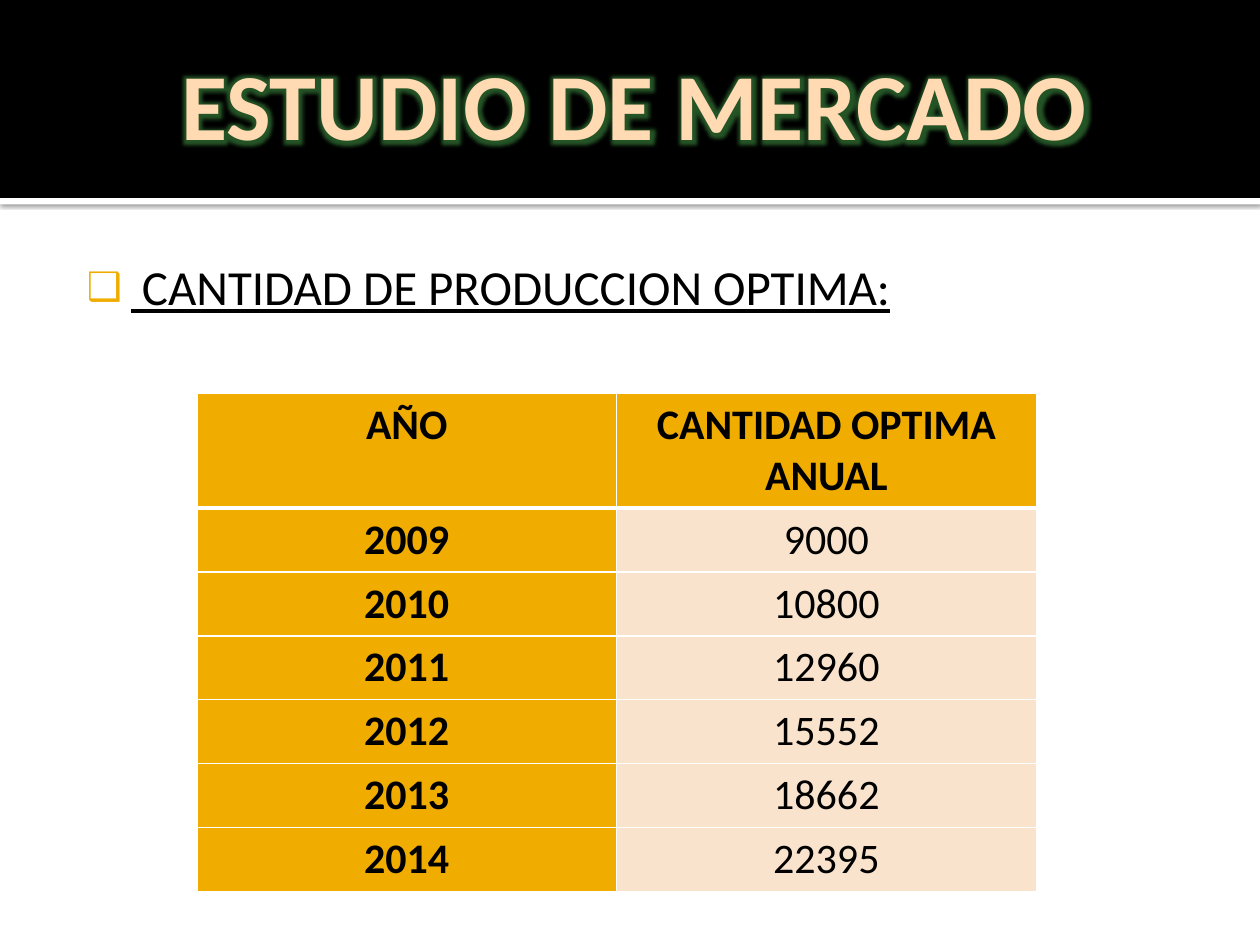
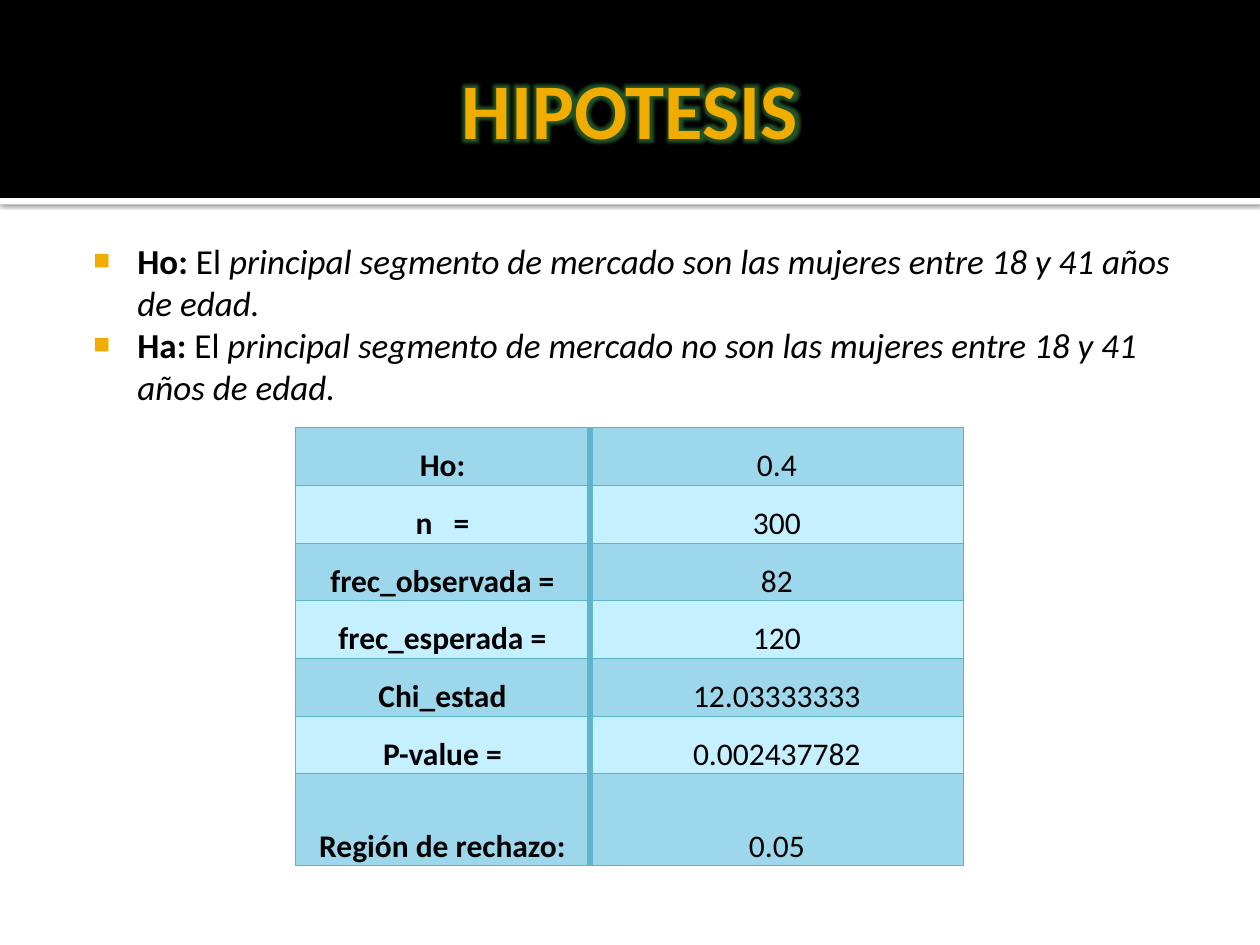
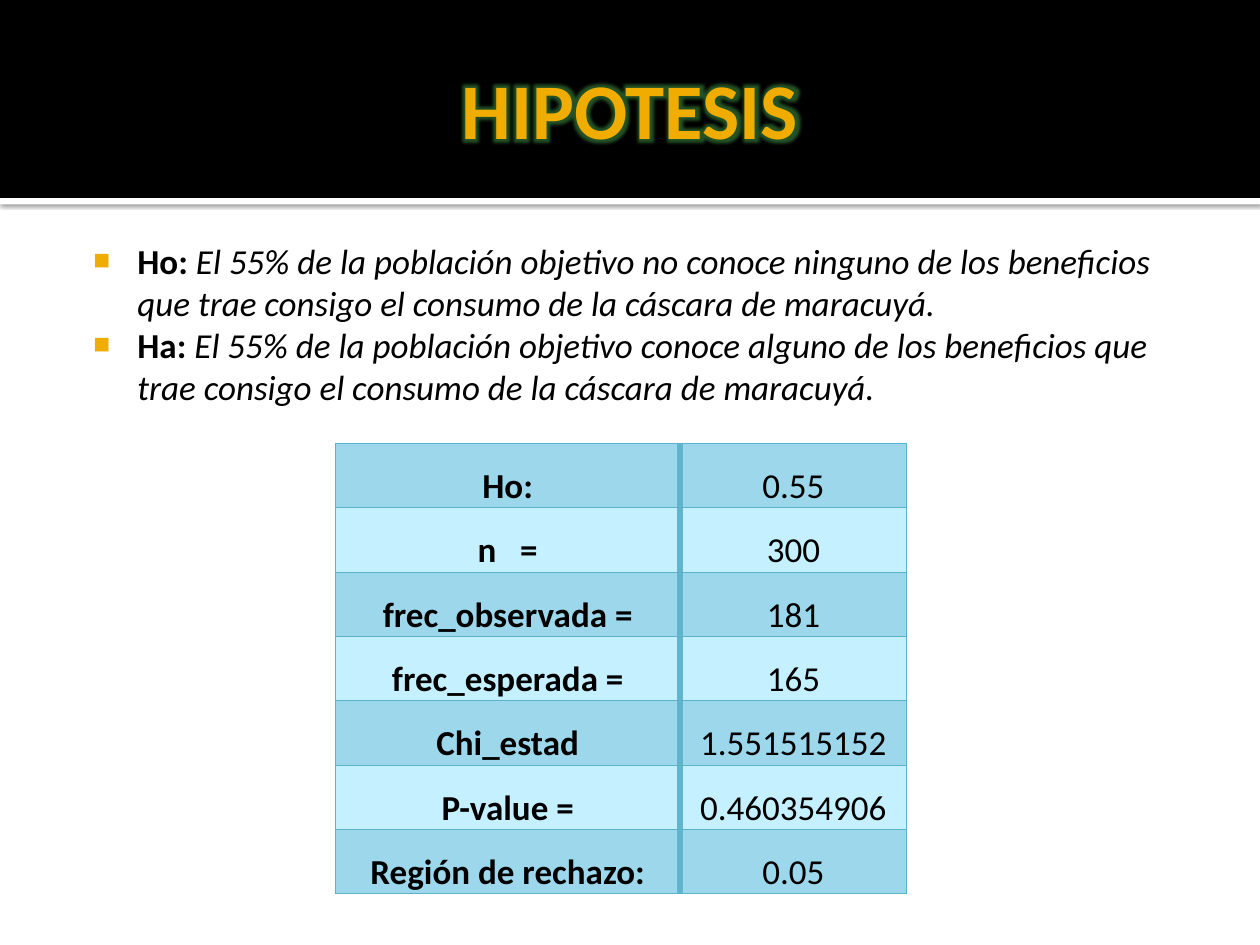
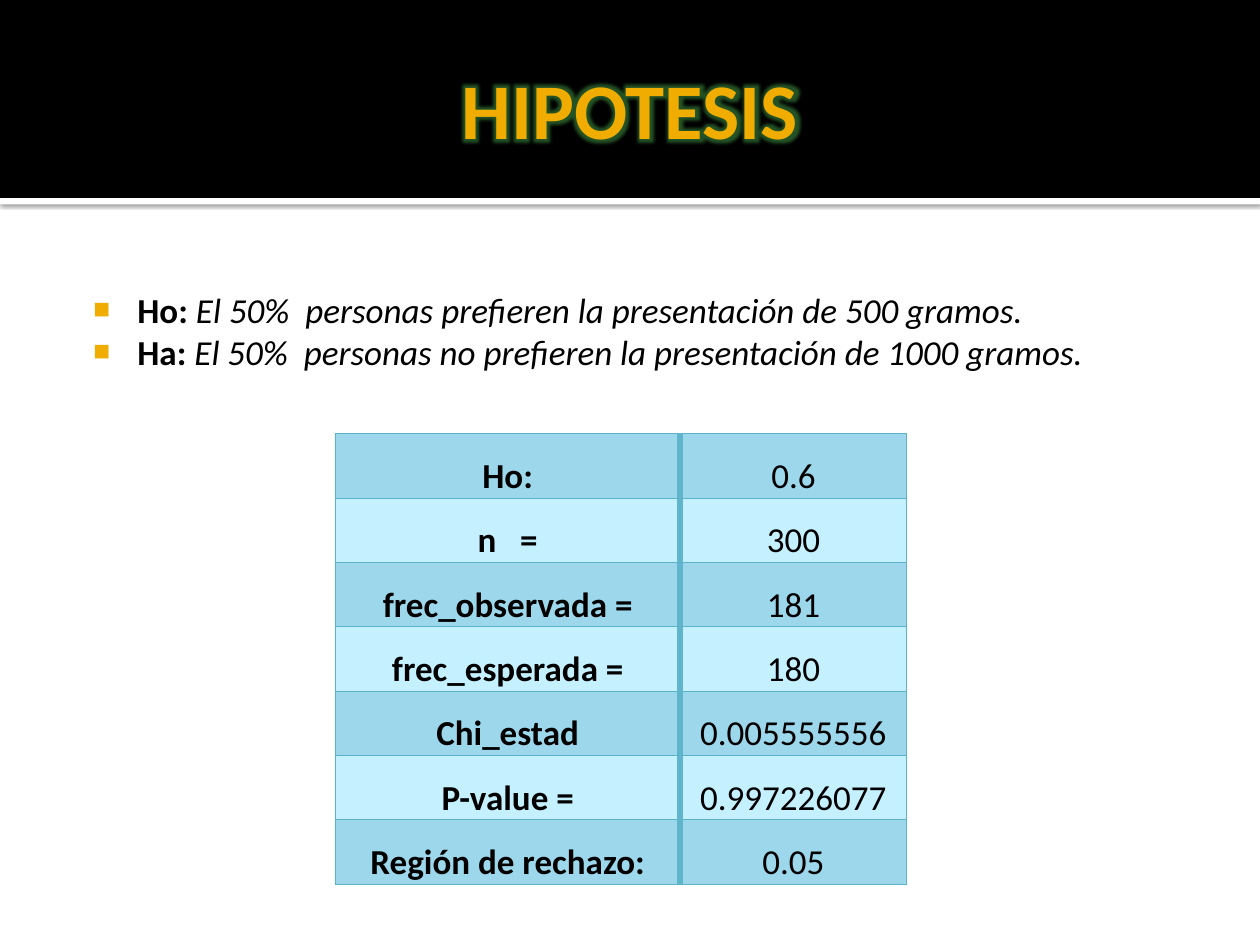
"""Build four slides on optimal production and market hypotheses."""
from lxml import etree
from pptx import Presentation
from pptx.dml.color import RGBColor
from pptx.enum import shapes, text
from pptx.oxml import parse_xml
from pptx.oxml.ns import nsdecls, qn
from pptx.util import Cm, Pt

COLORS = {
    "black": "000000", "white": "FFFFFF", "gold": "F0AD00", "cream": "FFDAB2",
    "peach": "F9E3CC", "glow": "3D8C40", "sky": "9CD7EB", "ice": "C5F0FF",
    "rule": "5BB3CA", "divider": "60B5CC",
}
FONT = "Calibri"
LABELS = ["Ho:", "n   =", "frec_observada =", "frec_esperada =", "Chi_estad",
          "P-value =", "Región de rechazo:"]
HYPOTHESIS = {
    "title": "HIPOTESIS", "title_at": (1.27, 0.43, 22.86, 3.48),
    "title_size": 45, "title_color": "gold",
    "body_at": (1.4, 4.57, 22.86, 13.13), "body_size": 20, "bullet": "■",
    "grid_at": (6.76, 8.94), "widths": (6.95, 4.57), "heights": [1.29] * 7,
    "grid_size": 20, "header": False,
}
PAGES = [
    {
        "title": "ESTUDIO DE MERCADO", "title_at": (1.57, 0.79, 22.43, 2.57),
        "title_size": 54, "title_color": "cream",
        "body_at": (1.27, 4.93, 22.86, 1.57), "body_size": 28, "bullet": "❑",
        "points": [("", " CANTIDAD DE PRODUCCION OPTIMA:", "")],
        "grid_at": (3.97, 7.92), "widths": (8.46, 8.46),
        "heights": [2.29] + [1.27] * 6, "grid_size": 24, "header": True,
        "rows": [("AÑO", "CANTIDAD OPTIMA ANUAL"), ("2009", "9000"),
                 ("2010", "10800"), ("2011", "12960"), ("2012", "15552"),
                 ("2013", "18662"), ("2014", "22395")],
    },
    HYPOTHESIS | {
        "points": [
            ("Ho:", " El", " principal segmento de mercado son las mujeres "
             "entre 18 y 41 años de edad."),
            ("Ha:", " El", " principal segmento de mercado no son las mujeres "
             "entre 18 y 41 años de edad."),
        ],
        "grid_at": (5.95, 8.62), "widths": (5.94, 7.54),
        "heights": [1.16] * 6 + [1.85], "grid_size": 18,
        "rows": zip(LABELS, ["0.4", "300", "82", "120", "12.03333333",
                             "0.002437782", "0.05"]),
    },
    HYPOTHESIS | {
        "points": [
            ("Ho: ", "", "El 55% de la población objetivo no conoce ninguno de los "
             "beneficios que trae consigo el consumo de la cáscara de maracuyá."),
            ("Ha: ", "", "El 55% de la población objetivo conoce alguno de los "
             "beneficios que trae consigo el consumo de la cáscara de maracuyá."),
        ],
        "rows": zip(LABELS, ["0.55", "300", "181", "165", "1.551515152",
                             "0.460354906", "0.05"]),
    },
    HYPOTHESIS | {
        "points": [
            ("Ho: ", "", "El 50%  personas prefieren la presentación de 500 gramos."),
            ("Ha: ", "", "El 50%  personas no prefieren la presentación de "
             "1000 gramos."),
        ],
        "body_at": (1.4, 5.56, 22.86, 12.14), "grid_at": (6.76, 8.74),
        "rows": zip(LABELS, ["0.6", "300", "181", "180", "0.005555556",
                             "0.997226077", "0.05"]),
    },
]


def style(font, size, color, bold=None):
    font.name, font.size, font.bold = FONT, Pt(size), bold
    font.color.rgb = RGBColor.from_string(COLORS[color])


def effect(parent, tag, alpha, color, **settings):
    effects = etree.SubElement(parent, qn("a:effectLst"))
    kind = etree.SubElement(effects, qn(tag), {k: str(v) for k, v in settings.items()})
    shade = etree.SubElement(kind, qn("a:srgbClr"), val=COLORS[color])
    etree.SubElement(shade, qn("a:alpha"), val=str(alpha * 1000))


deck = Presentation()
deck.slide_width, deck.slide_height = Cm(25.4), Cm(19.05)
layout = deck.slide_layouts[1]

for number, page in enumerate(PAGES):
    slide = deck.slides.add_slide(layout)

    if number == 0:
        bands = [("white", 3.99, 0.13), ("black", 0, 3.99)]
        for order, (color, top, height) in enumerate(bands):
            band = slide.shapes.add_shape(shapes.MSO_SHAPE.RECTANGLE, 0, Cm(top),
                                          deck.slide_width, Cm(height))
            band.fill.solid()
            band.fill.fore_color.rgb = RGBColor.from_string(COLORS[color])
            band.line.fill.background()
            if color == "white":
                effect(band._element.spPr, "a:outerShdw", 60, "black",
                       blurRad=Pt(2.5), dist=Pt(0.8), dir=5400000)
            else:
                band.shadow.inherit = False
            band._element.nvSpPr.cNvPr.set("id", str(20 + order))
            layout.shapes._spTree.insert(2 + order, band._element)

    heading = slide.shapes.title
    heading.left, heading.top, heading.width, heading.height = map(Cm, page["title_at"])
    heading.text_frame.text = page["title"]
    heading.text_frame.auto_size = text.MSO_AUTO_SIZE.NONE
    heading.text_frame.vertical_anchor = text.MSO_ANCHOR.MIDDLE
    heading_line = heading.text_frame.paragraphs[0]
    heading_line.alignment = text.PP_ALIGN.CENTER
    style(heading_line.font, page["title_size"], page["title_color"], True)
    effect(heading_line.runs[0]._r.get_or_add_rPr(), "a:glow", 60, "glow", rad=Pt(8))

    claims = slide.placeholders[1]
    claims.left, claims.top, claims.width, claims.height = map(Cm, page["body_at"])
    frame = claims.text_frame
    frame.auto_size = text.MSO_AUTO_SIZE.NONE
    frame.margin_left, frame.margin_top = Cm(0.15), Cm(0.25)
    frame.margin_right, frame.margin_bottom = Cm(0.25), Cm(0.13)
    for index, point in enumerate(page["points"]):
        claim = frame.add_paragraph() if index else frame.paragraphs[0]
        claim.space_before = Pt(0)
        style(claim.font, page["body_size"], "black")
        claim.font.underline = page["header"] or None
        for part, words in enumerate(point):
            if words:
                run = claim.add_run()
                run.text = words
                run.font.bold, run.font.italic = part == 0, part == 2
        props = claim._p.get_or_add_pPr()
        props.set("marL", str(Cm(1.22)))
        props.set("indent", str(Cm(-0.89)))
        bullet = [
            f'<a:buClr {nsdecls("a")}><a:srgbClr val="{COLORS["gold"]}"/></a:buClr>',
            f'<a:buSzPct {nsdecls("a")} val="80000"/>',
            f'<a:buChar {nsdecls("a")} char="{page["bullet"]}"/>',
        ]
        for piece in bullet:
            props.find(qn("a:defRPr")).addprevious(parse_xml(piece))

    widths, heights = page["widths"], page["heights"]
    grid = slide.shapes.add_table(len(heights), len(widths), *map(Cm, page["grid_at"]),
                                  Cm(sum(widths)), Cm(sum(heights))).table
    grid.first_row = grid.horz_banding = False
    for column, width in zip(grid.columns, widths):
        column.width = Cm(width)
    for r, (row, height, values) in enumerate(zip(grid.rows, heights, page["rows"])):
        row.height = Cm(height)
        for c, (cell, value) in enumerate(zip(row.cells, values)):
            cell.text = value
            entry = cell.text_frame.paragraphs[0]
            entry.alignment = text.PP_ALIGN.CENTER
            strong = c == 0 or (page["header"] and r == 0)
            style(entry.font, page["grid_size"], "black", strong)
            if page["header"]:
                fill = "gold" if strong else "peach"
                borders = dict.fromkeys("LRTB", ("white", 1))
                if r < 2:
                    borders["TB"[1 - r]] = ("white", 3)
            else:
                fill = "ice" if r % 2 else "sky"
                borders = dict.fromkeys("LRTB", ("rule", 0.5))
                borders["LR"[1 - c]] = ("divider", 3.78)
                entry.line_spacing, entry.space_after = 1.5, Pt(10)
                cell.vertical_anchor = text.MSO_ANCHOR.BOTTOM
                cell.margin_left = cell.margin_right = Cm(0.13)
                cell.margin_top = cell.margin_bottom = 0
            cell_props = cell._tc.get_or_add_tcPr()
            for side, (color, weight) in borders.items():
                edge = etree.SubElement(cell_props, qn(f"a:ln{side}"), w=str(Pt(weight)))
                paint = etree.SubElement(edge, qn("a:solidFill"))
                etree.SubElement(paint, qn("a:srgbClr"), val=COLORS[color])
            cell.fill.solid()
            cell.fill.fore_color.rgb = RGBColor.from_string(COLORS[fill])

deck.save("out.pptx")
